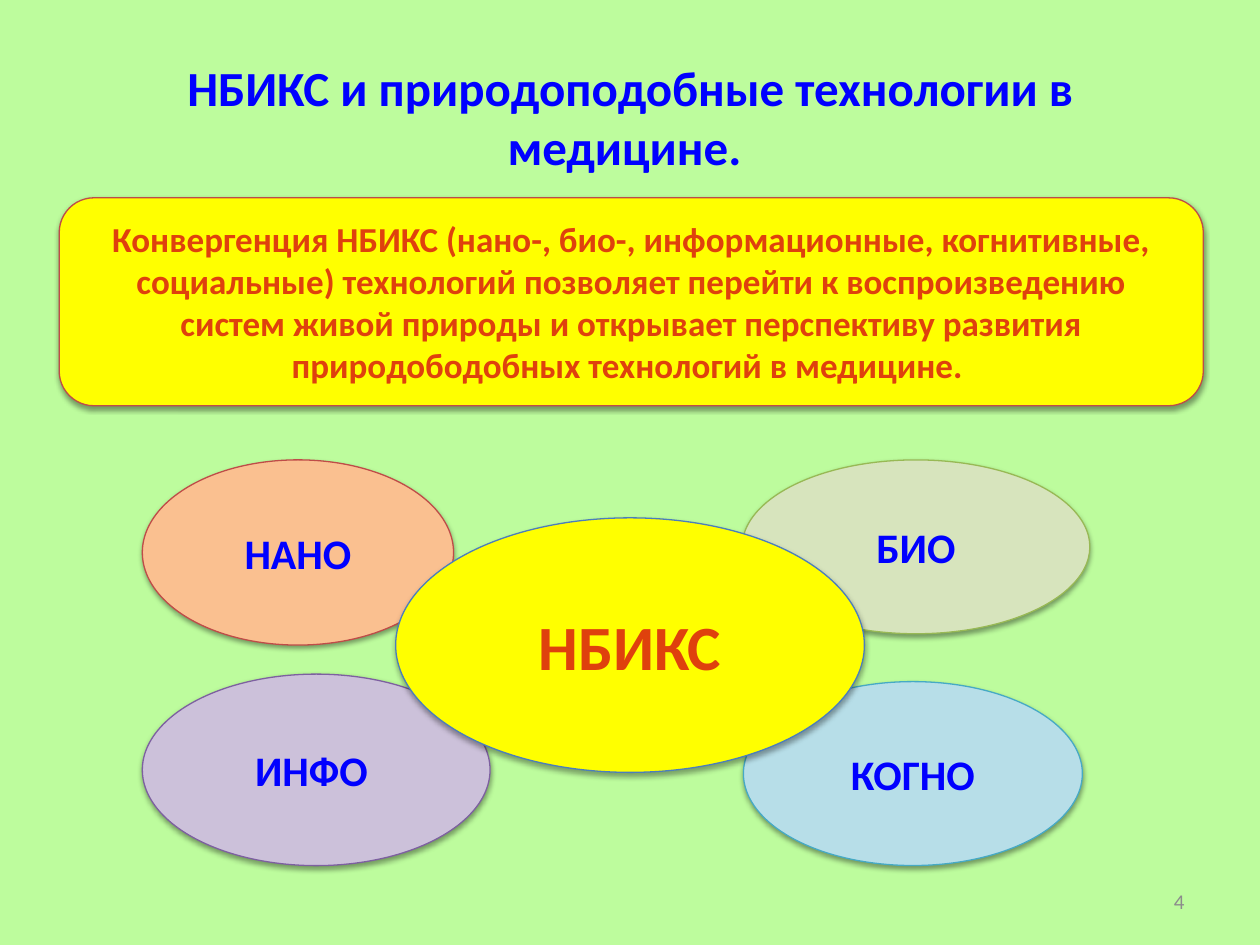
from dataclasses import dataclass

from lxml import etree
from pptx import Presentation
from pptx.dml.color import RGBColor
from pptx.enum.shapes import MSO_SHAPE
from pptx.enum.text import MSO_ANCHOR, PP_ALIGN
from pptx.oxml.ns import qn
from pptx.util import Inches, Pt


@dataclass(frozen=True)
class Theme:
    font: str = "Calibri"
    background: str = "BDFC9D"
    yellow: str = "FFFF00"
    blue: str = "0000FF"
    red: str = "DF410D"
    gray: str = "8C8C8C"
    red_line: str = "BF4C48"
    blue_line: str = "4B7EBC"
    center_size: int = 36
    title_size: int = 28
    label_size: int = 24
    body_size: int = 20
    number_size: int = 12


class SlideBuilder:
    def __init__(self, prs, theme):
        self.theme = theme
        self.s = prs.slides.add_slide(prs.slide_layouts[6])
        fill = self.s.background.fill
        fill.solid()
        fill.fore_color.rgb = RGBColor.from_string(theme.background)

    def set_text(self, sp, text, size, color, bold=True,
                 align=PP_ALIGN.CENTER):
        tf = sp.text_frame
        tf.word_wrap = True
        tf.vertical_anchor = MSO_ANCHOR.MIDDLE
        p = tf.paragraphs[0]
        p.alignment = align
        r = p.add_run()
        r.text = text
        style = {"name": self.theme.font, "size": Pt(size), "bold": bold}
        for key, value in style.items():
            setattr(r.font, key, value)
        r.font.color.rgb = RGBColor.from_string(color)

    def text(self, box, *args, **style):
        sp = self.s.shapes.add_textbox(*map(Inches, box))
        self.set_text(sp, *args, **style)

    def shape(self, kind, box, fill, line, *args, shadow=(1.6, 38)):
        sp = self.s.shapes.add_shape(kind, *map(Inches, box))
        sp.fill.solid()
        sp.fill.fore_color.rgb = RGBColor.from_string(fill)
        sp.line.color.rgb = RGBColor.from_string(line)
        sp.line.width = Pt(0.75)
        self.drop_shadow(sp, *shadow)
        self.set_text(sp, *args)

    def drop_shadow(self, sp, distance, opacity):
        sp.shadow.inherit = False
        effects = sp._element.spPr.find(qn("a:effectLst"))
        outer = etree.SubElement(
            effects, qn("a:outerShdw"), blurRad=str(Pt(3.1)),
            dist=str(Pt(distance)), dir="5400000", rotWithShape="0")
        color = etree.SubElement(outer, qn("a:srgbClr"), val="000000")
        etree.SubElement(color, qn("a:alpha"), val=str(opacity * 1000))


def main():
    prs = Presentation()
    prs.slide_width, prs.slide_height = Inches(10), Inches(7.5)
    t = Theme()
    slide = SlideBuilder(prs, t)

    # Statement panel
    slide.shape(
        MSO_SHAPE.ROUNDED_RECTANGLE, (0.47, 1.57, 9.08, 1.65),
        t.yellow, t.red_line,
        "Конвергенция НБИКС (нано-, био-, информационные, когнитивные, "
        "социальные) технологий позволяет перейти к воспроизведению систем "
        "живой природы и открывает перспективу развития природободобных "
        "технологий в медицине. ", t.body_size, t.red)

    # Title and slide number
    slide.text((0.5, 0.3, 9, 1.25),
               "НБИКС и природоподобные технологии в медицине. ",
               t.title_size, t.blue)
    slide.text((7.17, 6.95, 2.33, 0.4), "4", t.number_size, t.gray,
               bold=False, align=PP_ALIGN.RIGHT)

    # Component technologies
    components = [
        ("НАНО", (1.13, 3.65, 2.47, 1.47), "FAC090", t.red_line),
        ("БИО", (5.89, 3.65, 2.76, 1.38), "D7E4BD", "98B955"),
        ("КОГНО", (5.9, 5.41, 2.69, 1.46), "B7DEE8", "46AAC5"),
        ("ИНФО ", (1.13, 5.35, 2.76, 1.52), "CCC1DA", "7D60A0"),
    ]
    for label, box, fill, line in components:
        slide.shape(MSO_SHAPE.OVAL, box, fill, line,
                    label, t.label_size, t.blue)

    # Central concept, on top of the components
    slide.shape(MSO_SHAPE.OVAL, (3.14, 4.11, 3.72, 2.02), t.yellow,
                t.blue_line, "НБИКС", t.center_size, t.red, shadow=(1.8, 35))

    prs.save("out.pptx")


if __name__ == "__main__":
    main()
